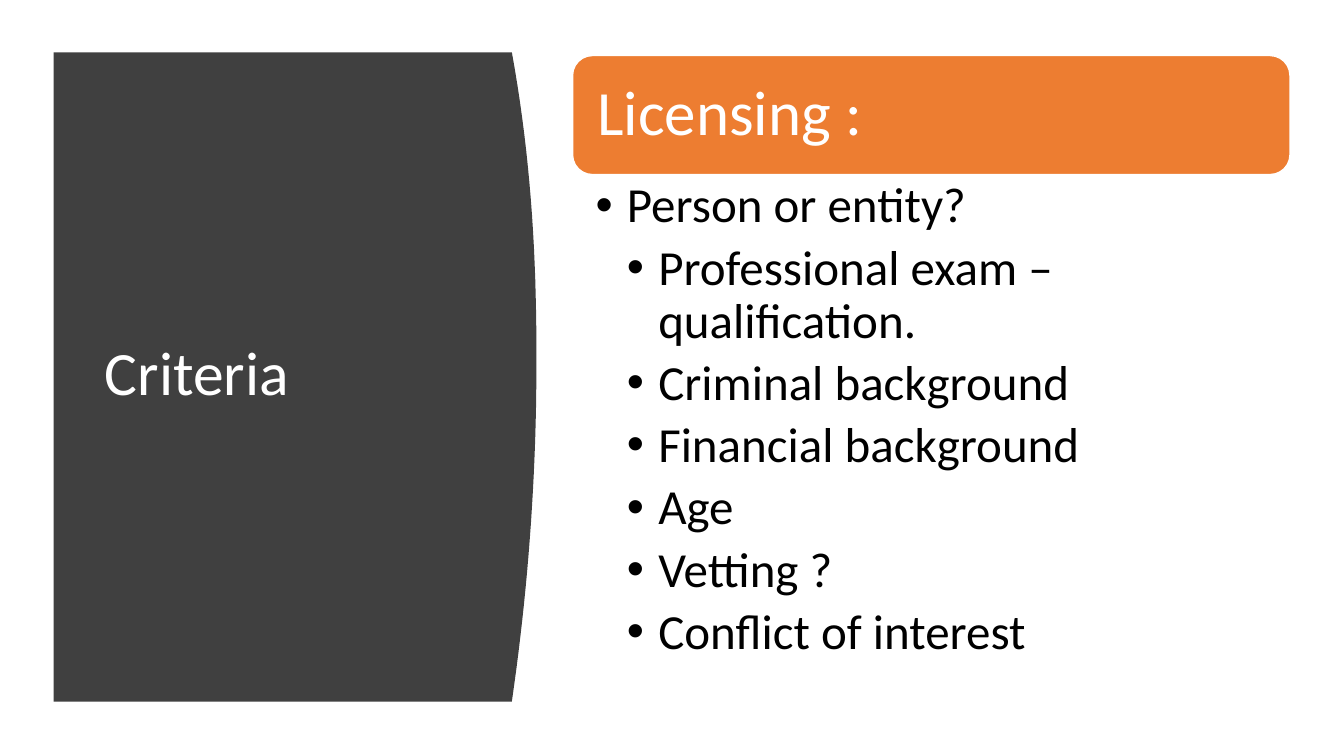
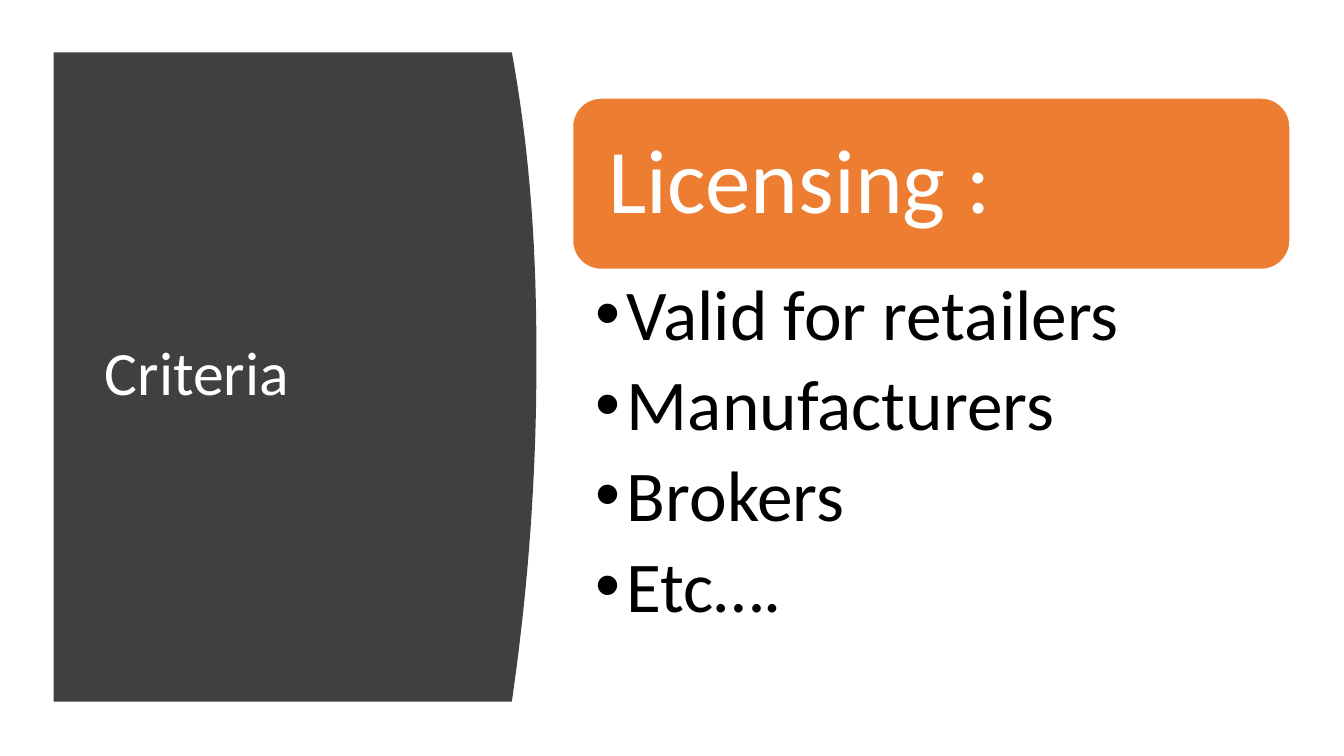
"""Build two licensing criteria slides with a curved title panel."""
from lxml import etree
from pptx import Presentation
from pptx import util as u
from pptx.dml.color import RGBColor
from pptx.enum import shapes, text
from pptx.oxml.ns import qn

FONT = "Calibri"
COLOURS = {"panel": "404040", "banner": "ED7D31", "light": "FFFFFF", "dark": "000000"}
TITLE = {"text": "Criteria", "size": 44, "box": (2.39, 2.82, 9.5, 13.31)}
PANEL = {"left": 1.35, "top": 1.32, "bottom": 17.68, "corner": 12.9, "peak": (13.52, 9.14)}
COLUMN_LEFT, COLUMN_WIDTH = 14.43, 18.08
HANGING = 0.79
CURVE_STEPS = 40

SLIDES = [
    {
        "banner": {"text": "Licensing :", "size": 45, "top": 1.4, "height": 3.0, "inset": 0.48},
        "list": {"size": 35, "height": 13.2, "insets": (0.58, 0.15, 0.89, 0.15)},
        "items": [
            (1, "Person or entity?"),
            (2, "Professional exam – qualification."),
            (2, "Criminal background"),
            (2, "Financial background"),
            (2, "Age"),
            (2, "Vetting ?"),
            (2, "Conflict of interest"),
        ],
    },
    {
        "banner": {"text": "Licensing :", "size": 65, "top": 2.47, "height": 4.32, "inset": 0.69},
        "list": {"size": 51, "height": 9.73, "insets": (0.58, 0.23, 1.3, 0.23)},
        "items": [
            (1, "Valid for retailers"),
            (1, "Manufacturers"),
            (1, "Brokers"),
            (1, "Etc…."),
        ],
    },
]


def colour(name):
    return RGBColor.from_string(COLOURS[name])


def cm(*lengths):
    return [u.Cm(length) for length in lengths]


def set_all(target, values):
    for name, value in values.items():
        setattr(target, name, value)


def paint(part, fill):
    part.shadow.inherit = False
    part.fill.solid()
    part.fill.fore_color.rgb = colour(fill)


def format_frame(frame, anchor, insets):
    margins = dict(zip(("margin_left", "margin_top", "margin_right", "margin_bottom"), cm(*insets)))
    set_all(frame, {"word_wrap": True, "auto_size": text.MSO_AUTO_SIZE.NONE,
                    "vertical_anchor": anchor, **margins})


def write(paragraph, words, size, ink, space_after=0):
    paragraph.text = words
    set_all(paragraph, {"alignment": text.PP_ALIGN.LEFT, "line_spacing": 0.9,
                        "space_before": u.Pt(0), "space_after": u.Pt(space_after)})
    font = paragraph.runs[0].font
    set_all(font, {"name": FONT, "size": u.Pt(size)})
    font.color.rgb = colour(ink)


def add_bullet(paragraph, level):
    paragraph.level = level
    properties = paragraph._p.get_or_add_pPr()
    properties.set("marL", str(u.Cm(HANGING * level)))
    properties.set("indent", str(-u.Cm(HANGING)))
    etree.SubElement(properties, qn("a:buFont")).set("typeface", "Arial")
    etree.SubElement(properties, qn("a:buChar")).set("char", "•")


def curve_point(step):
    top, bottom = PANEL["top"], PANEL["bottom"]
    peak_x, peak_y = PANEL["peak"]
    y = top + (bottom - top) * step / CURVE_STEPS
    end, power = (top, 2.3) if y < peak_y else (bottom, 2)
    distance = (y - peak_y) / (end - peak_y)
    return cm(peak_x - (peak_x - PANEL["corner"]) * distance ** power, y)


def add_panel(slide):
    outline = slide.shapes.build_freeform(*cm(PANEL["left"], PANEL["top"]))
    curve = [curve_point(step) for step in range(CURVE_STEPS + 1)]
    outline.add_line_segments(curve + [cm(PANEL["left"], PANEL["bottom"])], close=True)
    panel = outline.convert_to_shape()
    paint(panel, "panel")
    panel.line.fill.background()
    slide.shapes._spTree.insert(2, panel._element)


def add_title(slide):
    title = slide.shapes.title
    set_all(title, dict(zip(("left", "top", "width", "height"), cm(*TITLE["box"]))))
    format_frame(title.text_frame, text.MSO_ANCHOR.MIDDLE, (0.25, 0.13, 0.25, 0.13))
    write(title.text_frame.paragraphs[0], TITLE["text"], TITLE["size"], "light")


def add_banner(slide, content):
    box = cm(COLUMN_LEFT, content["top"], COLUMN_WIDTH, content["height"])
    banner = slide.shapes.add_shape(shapes.MSO_SHAPE.ROUNDED_RECTANGLE, *box)
    paint(banner, "banner")
    banner.line.color.rgb = colour("light")
    banner.line.width = u.Pt(1)
    format_frame(banner.text_frame, text.MSO_ANCHOR.MIDDLE, [content["inset"]] * 4)
    write(banner.text_frame.paragraphs[0], content["text"], content["size"], "light")


def add_list(slide, top, style, items):
    box = cm(COLUMN_LEFT, top, COLUMN_WIDTH, style["height"])
    frame = slide.shapes.add_textbox(*box).text_frame
    format_frame(frame, text.MSO_ANCHOR.TOP, style["insets"])
    for index, (level, words) in enumerate(items):
        paragraph = frame.add_paragraph() if index else frame.paragraphs[0]
        write(paragraph, words, style["size"], "dark", style["size"] * 0.19)
        add_bullet(paragraph, level)


def main():
    deck = Presentation()
    set_all(deck, {"slide_width": u.Cm(33.87), "slide_height": u.Cm(19.05)})
    for content in SLIDES:
        slide = deck.slides.add_slide(deck.slide_layouts[5])
        banner = content["banner"]
        add_panel(slide)
        add_title(slide)
        add_banner(slide, banner)
        add_list(slide, banner["top"] + banner["height"], content["list"], content["items"])
    deck.save("out.pptx")


if __name__ == "__main__":
    main()
